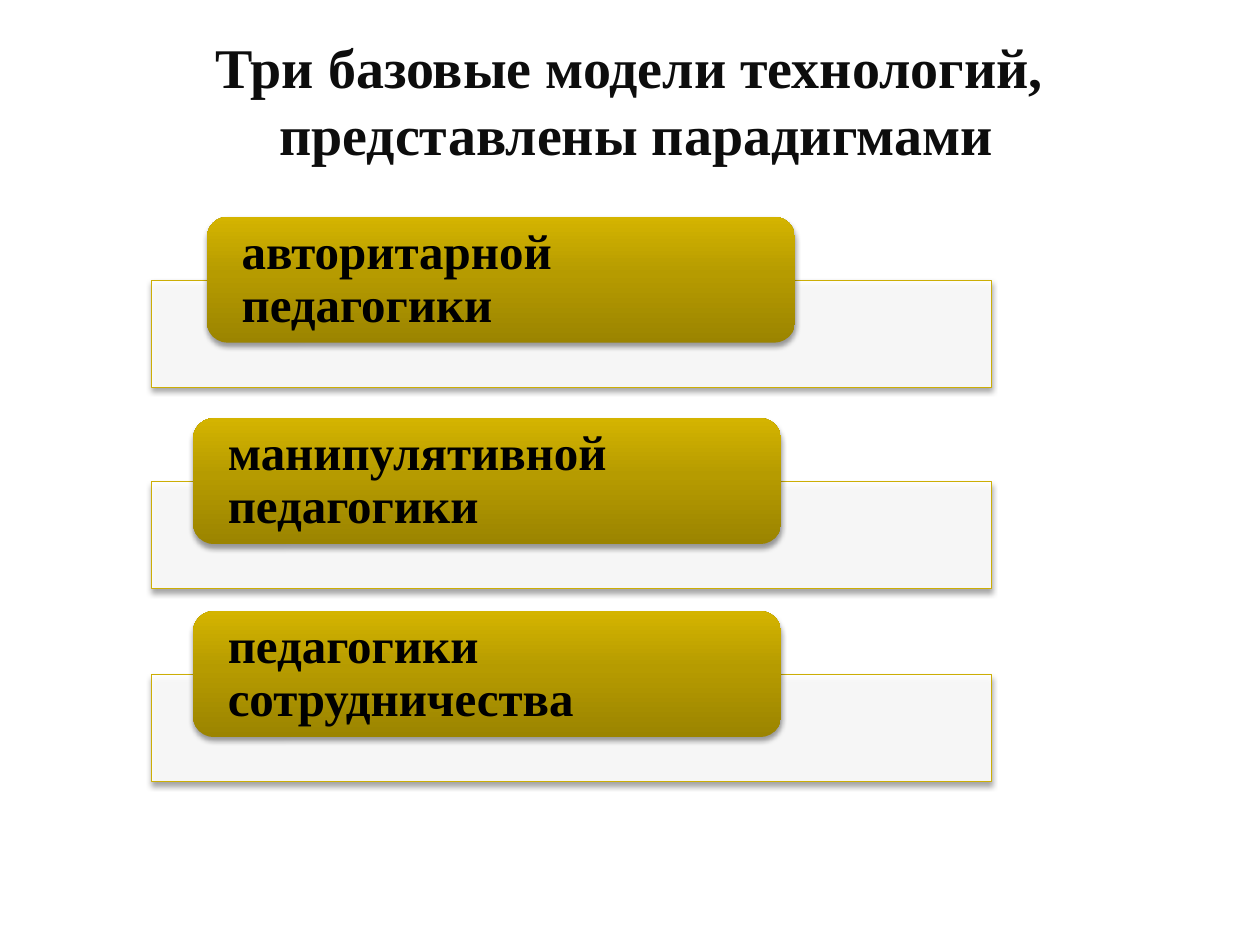
"""Build the slide on three basic models of pedagogical technologies."""
from lxml.etree import SubElement
from pptx import Presentation
from pptx.dml.color import RGBColor
from pptx.enum.shapes import MSO_SHAPE
from pptx.enum.text import MSO_ANCHOR, MSO_AUTO_SIZE, PP_ALIGN
from pptx.oxml.ns import qn
from pptx.util import Cm, Pt

COLORS = {
    "title": "0D0D0D", "outline": "262626", "text": "000000", "shadow": "000000",
    "bar": "FFFFFF", "border": "CCAE05",
    "dark": "9B8400", "middle": "B69B00", "light": "D4B400",
}
GRADIENT = [(0, "dark"), (55, "middle"), (100, "light")]
MODELS = [
    ("авторитарной педагогики", 4.17, 4.37),
    ("манипулятивной педагогики", 3.89, 8.43),
    ("педагогики сотрудничества", 3.89, 12.32),
]


def rgb(name):
    return RGBColor.from_string(COLORS[name])


def add_color(parent, name, alpha=None):
    clr = SubElement(parent, qn("a:srgbClr"), val=COLORS[name])
    if alpha is not None:
        SubElement(clr, qn("a:alpha"), val=str(alpha * 1000))


def add_outline(r, name):
    rPr = r._r.get_or_add_rPr()
    ln = SubElement(rPr, qn("a:ln"), w=str(Pt(0.15)))
    add_color(SubElement(ln, qn("a:solidFill")), name)
    rPr.insert(0, ln)


def write_text(tf, text, size=28, color="text", align=PP_ALIGN.LEFT, spacing=None,
               margin=0.25, outline=None):
    tf.word_wrap = True
    tf.auto_size = MSO_AUTO_SIZE.NONE
    tf.vertical_anchor = MSO_ANCHOR.MIDDLE
    tf.margin_left = tf.margin_right = Cm(margin)
    p = tf.paragraphs[0]
    p.text = text
    p.alignment = align
    p.line_spacing = spacing
    for r in p.runs:
        r.font.name = "Times New Roman"
        r.font.size = Pt(size)
        r.font.bold = True
        r.font.color.rgb = rgb(color)
        if outline:
            add_outline(r, outline)


def add_shadow(sp):
    sp.shadow.inherit = False
    effects = sp._element.spPr.find(qn("a:effectLst"))
    shadow = SubElement(effects, qn("a:outerShdw"), blurRad=str(Pt(3.1)),
                        dist=str(Pt(2)), dir="5400000", rotWithShape="0")
    add_color(shadow, "shadow", 38)


def add_bar(s, top):
    sp = s.shapes.add_shape(MSO_SHAPE.RECTANGLE, Cm(3.05), Cm(top), Cm(16.94), Cm(2.16))
    sp.fill.solid()
    sp.fill.fore_color.rgb = rgb("bar")
    clr = sp._element.spPr.find(qn("a:solidFill"))[0]
    SubElement(clr, qn("a:alpha"), val="90000")
    sp.line.color.rgb = rgb("border")
    sp.line.width = Pt(0.5)
    add_shadow(sp)


def add_pill(s, text, left, top):
    sp = s.shapes.add_shape(MSO_SHAPE.ROUNDED_RECTANGLE, Cm(left), Cm(top), Cm(11.86), Cm(2.54))
    sp.fill.gradient()
    sp.fill.gradient_angle = 90
    stops = sp._element.spPr.find(qn("a:gradFill")).find(qn("a:gsLst"))
    stops.clear()
    for position, name in GRADIENT:
        add_color(SubElement(stops, qn("a:gs"), pos=str(position * 1000)), name)
    sp.line.fill.background()
    add_shadow(sp)
    write_text(sp.text_frame, text, spacing=0.9, margin=0.58)


def add_title(s, text):
    sp = s.shapes.title
    sp.left, sp.top, sp.width, sp.height = Cm(1.4), Cm(0.41), Cm(22.86), Cm(3.18)
    write_text(sp.text_frame, text, size=32, color="title", align=PP_ALIGN.CENTER,
               outline="outline")


def main():
    prs = Presentation()
    prs.slide_width, prs.slide_height = Cm(25.4), Cm(19.05)
    s = prs.slides.add_slide(prs.slide_layouts[5])
    add_title(s, "Три базовые модели технологий, \vпредставлены парадигмами")
    for text, left, top in MODELS:
        add_bar(s, top + 1.28)
        add_pill(s, text, left, top)
    prs.save("out.pptx")


if __name__ == "__main__":
    main()
